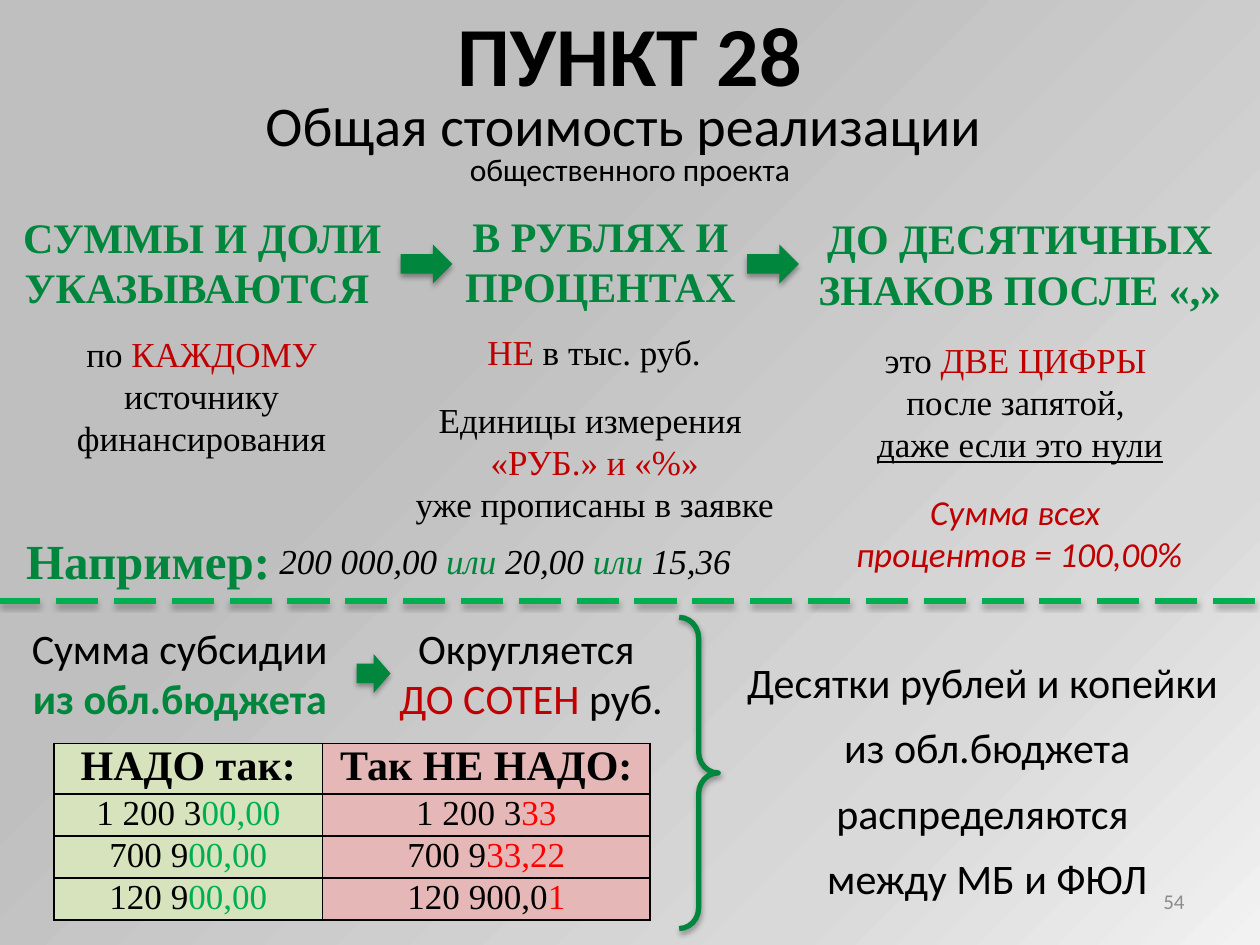
from dataclasses import dataclass, replace
from typing import Optional

from lxml import etree
from pptx import Presentation
from pptx.dml.color import RGBColor
from pptx.enum.dml import MSO_LINE
from pptx.enum.shapes import MSO_CONNECTOR, MSO_SHAPE
from pptx.enum.text import MSO_ANCHOR, MSO_AUTO_SIZE, PP_ALIGN
from pptx.oxml import parse_xml
from pptx.oxml.ns import nsdecls, qn
from pptx.util import Inches, Pt

SANS, SERIF = "Calibri", "Times New Roman"
BLACK, GREEN, RED, GRAY = "000000", "00863D", "C00000", "8C8C8C"
BRIGHT_GREEN, BRIGHT_RED = "00B050", "FF0000"
GOOD_FILL, BAD_FILL = "D6E3BC", "E5B8B7"


@dataclass(frozen=True)
class Span:
    text: str
    color: Optional[str] = None
    bold: Optional[bool] = None
    italic: Optional[bool] = None
    underline: Optional[bool] = None


@dataclass(frozen=True)
class Style:
    name: str
    size: int
    color: str = BLACK
    bold: bool = False
    italic: bool = False
    align: PP_ALIGN = PP_ALIGN.CENTER
    spacing: Optional[float] = None


@dataclass(frozen=True)
class TextBlock:
    place: tuple
    style: Style
    lines: list  # each line is a list of spans
    wrap: bool = True


def rgb(color: str) -> RGBColor:
    return RGBColor.from_string(color)


def write_para(para, style: Style, spans: list) -> None:
    para.alignment = style.align
    if style.spacing:
        para.line_spacing = style.spacing
    font = para.font
    font.name, font.size = style.name, Pt(style.size)
    font.bold, font.italic = style.bold, style.italic
    font.color.rgb = rgb(style.color)
    for span in spans:
        run = para.add_run()
        run.text = span.text
        if span.color:
            run.font.color.rgb = rgb(span.color)
        for trait in ("bold", "italic", "underline"):
            if getattr(span, trait) is not None:
                setattr(run.font, trait, getattr(span, trait))


def next_para(frame, index: int):
    return frame.paragraphs[0] if index == 0 else frame.add_paragraph()


def add_text(page, block: TextBlock):
    box = page.shapes.add_textbox(*map(Inches, block.place))
    frame = box.text_frame
    frame.word_wrap = block.wrap
    frame.auto_size = MSO_AUTO_SIZE.SHAPE_TO_FIT_TEXT
    for index, spans in enumerate(block.lines):
        write_para(next_para(frame, index), block.style, spans)
    return box


def add_shadow(shape) -> None:
    effects = etree.SubElement(shape._element.spPr, qn("a:effectLst"))
    shadow = etree.SubElement(effects, qn("a:outerShdw"), blurRad=str(Pt(3.1)),
                              dist=str(Pt(1.8)), dir="5400000", rotWithShape="0")
    color = etree.SubElement(shadow, qn("a:srgbClr"), val=BLACK)
    etree.SubElement(color, qn("a:alpha"), val="35000")


def add_arrow(page, left: float, top: float, width: float) -> None:
    arrow = page.shapes.add_shape(MSO_SHAPE.RIGHT_ARROW, Inches(left), Inches(top),
                                  Inches(width), Inches(0.31))
    arrow.fill.solid()
    arrow.fill.fore_color.rgb = rgb(GREEN)
    arrow.line.fill.background()
    add_shadow(arrow)


def fill_cell(cell, fill: str, style: Style, spans: list) -> None:
    cell.margin_left = cell.margin_right = Inches(0.07)
    cell.margin_top = cell.margin_bottom = 0
    write_para(cell.text_frame.paragraphs[0], style, spans)
    properties = cell._tc.get_or_add_tcPr()
    for side in ("lnL", "lnR", "lnT", "lnB"):
        border = etree.SubElement(properties, qn(f"a:{side}"), w=str(Pt(1)))
        solid = etree.SubElement(border, qn("a:solidFill"))
        etree.SubElement(solid, qn("a:srgbClr"), val=BLACK)
    cell.fill.solid()
    cell.fill.fore_color.rgb = rgb(fill)


def set_background(page) -> None:
    page.background.fill.solid()
    properties = page.background._cSld.bg.bgPr
    stops = "".join(f'<a:gs pos="{place * 1000}"><a:srgbClr val="{color}"/></a:gs>'
                    for place, color in ((0, "F2F2F2"), (22, "D9D9D9"), (65, "BFBFBF")))
    gradient = parse_xml(
        f'<a:gradFill {nsdecls("a")} rotWithShape="1"><a:gsLst>{stops}</a:gsLst>'
        '<a:path path="circle"><a:fillToRect l="100000" t="100000"/></a:path></a:gradFill>')
    properties.replace(properties.find(qn("a:solidFill")), gradient)


def set_title(page) -> None:
    title = page.shapes.title
    title.left, title.top, title.width, title.height = map(Inches, (0, -0.03, 10, 1.58))
    frame = title.text_frame
    frame.auto_size = MSO_AUTO_SIZE.NONE
    frame.vertical_anchor = MSO_ANCHOR.TOP
    rows = [("ПУНКТ 28", Style(SANS, 48, bold=True)),
            ("Общая стоимость реализации ", Style(SANS, 32, spacing=0.8)),
            ("общественного проекта", Style(SANS, 18, spacing=0.8))]
    for index, (text, style) in enumerate(rows):
        write_para(next_para(frame, index), style, [Span(text)])


HEADING = Style(SERIF, 24, GREEN, bold=True)
BODY = Style(SERIF, 20)
LARGE = Style(SANS, 24)
OR = Span("или", GREEN)

BLOCKS = [
    # Three headings
    TextBlock((0.08, 1.63, 3.05, 0.91), HEADING,
              [[Span("СУММЫ И ДОЛИ")], [Span("УКАЗЫВАЮТСЯ ")]], wrap=False),
    TextBlock((3.58, 1.62, 2.37, 0.91), HEADING,
              [[Span("В РУБЛЯХ И")], [Span("ПРОЦЕНТАХ")]], wrap=False),
    TextBlock((6.31, 1.64, 3.57, 0.91), HEADING, [[Span("ДО ДЕСЯТИЧНЫХ ЗНАКОВ ПОСЛЕ «,»")]]),
    # Explanations under the headings
    TextBlock((0.37, 2.59, 2.46, 1.11), BODY,
              [[Span("по "), Span("КАЖДОМУ", RED), Span(" источнику финансирования")]]),
    TextBlock((3.73, 2.57, 1.97, 0.44), BODY, [[Span("НЕ", RED), Span(" в тыс. руб.")]]),
    TextBlock((3.19, 3.11, 3.06, 1.11), BODY,
              [[Span("Единицы измерения ")], [Span("«РУБ.» и «%»", RED)],
               [Span("уже прописаны в заявке")]]),
    TextBlock((6.74, 2.64, 2.71, 1.11), BODY,
              [[Span("это "), Span("ДВЕ ЦИФРЫ ", RED)], [Span("после запятой, ")],
               [Span("даже если это нули", underline=True)]]),
    TextBlock((6.67, 3.84, 2.84, 0.77), Style(SANS, 20, RED, italic=True),
              [[Span("Сумма всех ")], [Span("процентов = 100,00%")]]),
    # Example line
    TextBlock((0.11, 4.16, 2.16, 0.57), replace(HEADING, size=28, align=PP_ALIGN.LEFT),
              [[Span("Например:")]], wrap=False),
    TextBlock((2.05, 4.23, 4.06, 0.44), replace(BODY, italic=True, align=PP_ALIGN.LEFT),
              [[Span(" 200 000,00 "), OR, Span(" 20,00 "), OR, Span(" 15,36")]]),
    # Rounding rule
    TextBlock((0.12, 4.89, 2.69, 0.91), LARGE,
              [[Span("Сумма субсидии ")], [Span("из обл.бюджета ", GREEN, bold=True)]]),
    TextBlock((3.04, 4.89, 2.35, 0.91), LARGE,
              [[Span("Округляется ")], [Span("ДО СОТЕН ", RED), Span("руб. ")]]),
    TextBlock((5.79, 5.04, 4.09, 2.2), replace(LARGE, spacing=1.3),
              [[Span("Десятки рублей и копейки ")], [Span("из обл.бюджета распределяются ")],
               [Span("между МБ и ФЮЛ")]]),
]

ARROWS = [(3.18, 1.94, 0.41), (5.93, 1.94, 0.41), (2.83, 5.19, 0.27)]

# Each amount is split into its plain and its highlighted digits
AMOUNTS = [(("1 200 3", "00,00"), ("1 200 3", "33")),
           (("700 9", "00,00"), ("700 9", "33,22")),
           (("120 9", "00,00"), ("120 900,0", "1"))]


def add_amounts(page) -> None:
    table = page.shapes.add_table(4, 2, Inches(0.43), Inches(5.9),
                                  Inches(4.73), Inches(1.4)).table
    for row, height in zip(table.rows, (0.4, 0.33, 0.33, 0.33)):
        row.height = Inches(height)
    columns = [("НАДО так:", 2.13, GOOD_FILL, BRIGHT_GREEN),
               ("Так НЕ НАДО:", 2.6, BAD_FILL, BRIGHT_RED)]
    for column, (heading, width, fill, accent) in enumerate(columns):
        table.columns[column].width = Inches(width)
        fill_cell(table.cell(0, column), fill, replace(HEADING, color=BLACK), [Span(heading)])
        for row, amounts in enumerate(AMOUNTS, start=1):
            plain, marked = amounts[column]
            fill_cell(table.cell(row, column), fill, BODY, [Span(plain), Span(marked, accent)])


def main() -> None:
    deck = Presentation()
    deck.slide_width, deck.slide_height = Inches(10), Inches(7.5)
    page = deck.slides.add_slide(deck.slide_layouts[5])
    set_background(page)
    set_title(page)
    for block in BLOCKS:
        add_text(page, block)
    for arrow in ARROWS:
        add_arrow(page, *arrow)
    add_amounts(page)

    # Page number
    number = add_text(page, TextBlock((7.17, 6.95, 2.33, 0.4),
                                      Style(SANS, 12, GRAY, align=PP_ALIGN.RIGHT), [[Span("54")]]))
    number.text_frame.auto_size = MSO_AUTO_SIZE.NONE
    number.text_frame.vertical_anchor = MSO_ANCHOR.MIDDLE

    # Dashed divider
    divider = page.shapes.add_connector(MSO_CONNECTOR.STRAIGHT, Inches(9.96), Inches(4.77),
                                        Inches(0), Inches(4.77))
    divider.line.color.rgb = rgb(BRIGHT_GREEN)
    divider.line.width = Pt(3)
    divider.line.dash_style = MSO_LINE.LONG_DASH
    add_shadow(divider)

    # Brace beside the table
    brace = page.shapes.add_shape(MSO_SHAPE.RIGHT_BRACE, Inches(5.39), Inches(4.9),
                                  Inches(0.31), Inches(2.47))
    brace.adjustments[0], brace.adjustments[1] = 0.53, 0.5
    brace.fill.background()
    brace.line.color.rgb = rgb(GREEN)
    brace.line.width = Pt(3)
    add_shadow(brace)

    deck.save("out.pptx")


if __name__ == "__main__":
    main()
